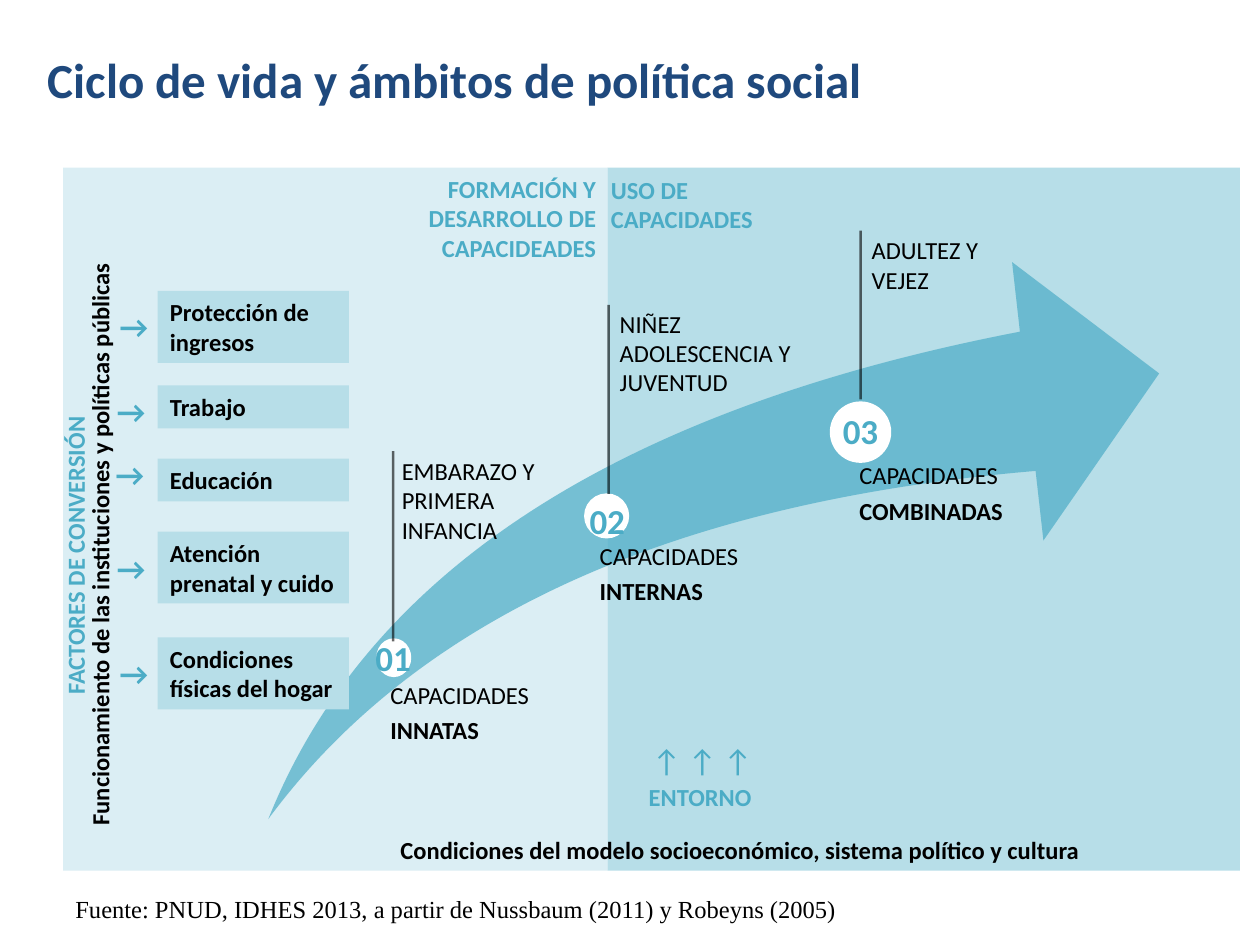
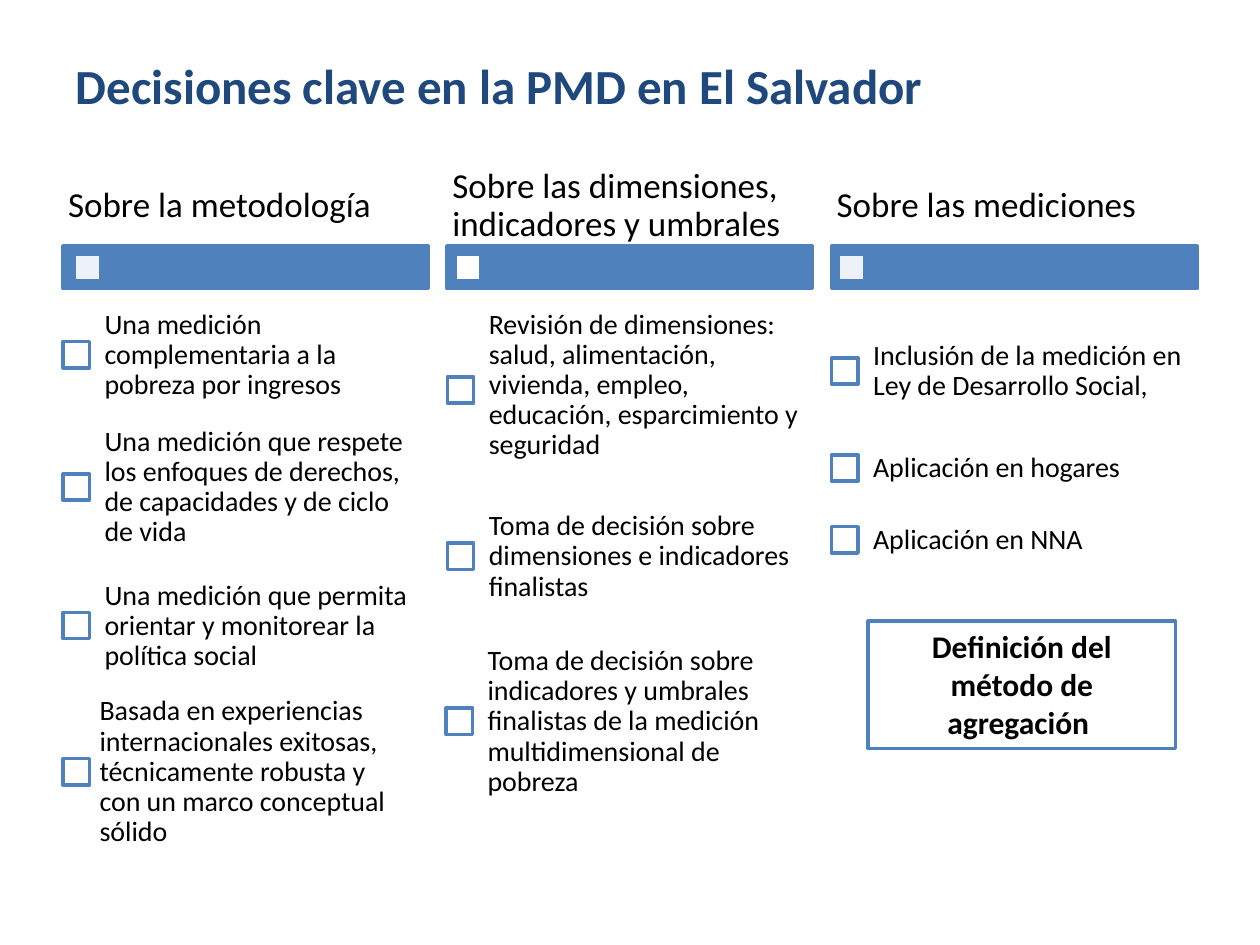
from dataclasses import dataclass
from lxml.etree import SubElement
from pptx import Presentation
from pptx.dml.color import RGBColor
from pptx.enum.shapes import MSO_CONNECTOR, MSO_SHAPE
from pptx.enum.text import MSO_ANCHOR, MSO_AUTO_SIZE, PP_ALIGN
from pptx.oxml.ns import qn
from pptx.util import Pt

PX = 9144  # 100 px to the inch


@dataclass(frozen=True)
class Theme:
    navy: str = "1F497D"
    blue: str = "4F81BD"
    teal: str = "4BACC6"
    sky: str = "B7DEE8"
    pale: str = "DBEEF4"
    white: str = "FFFFFF"
    black: str = "000000"
    font: str = "Calibri"
    source_font: str = "Times New Roman"
    title: int = 28
    heading: int = 20
    arrow: int = 18
    item: int = 16
    label: int = 14


theme = Theme()


def draw(slide, kind, box, fill=None, line=None, alpha=100):
    """Add a preset shape, or a text box when kind is None."""
    place = [value * PX for value in box]
    if kind is None:
        return slide.shapes.add_textbox(*place)
    shape = slide.shapes.add_shape(kind, *place)
    shape.shadow.inherit = False
    shape.fill.solid()
    shape.fill.fore_color.rgb = RGBColor.from_string(fill)
    if alpha < 100:
        color = shape.fill._xPr.find(qn("a:solidFill"))[0]
        SubElement(color, qn("a:alpha"), val=str(alpha * 1000))
    if line:
        shape.line.color.rgb = RGBColor.from_string(line)
        shape.line.width = Pt(2)
    else:
        shape.line.fill.background()
    return shape


def write(shape, text, size=theme.label, color=theme.black, bold=False, font=theme.font,
          align=PP_ALIGN.LEFT, anchor=MSO_ANCHOR.TOP, insets=(10, 5, 10, 5),
          spacing=1.0, after=0, wrap=True):
    """Set the text of a shape and format all its paragraphs."""
    frame = shape.text_frame
    frame.text = text
    frame.word_wrap = wrap
    frame.auto_size = MSO_AUTO_SIZE.NONE
    frame.vertical_anchor = anchor
    (frame.margin_left, frame.margin_top,
     frame.margin_right, frame.margin_bottom) = [value * PX for value in insets]
    for paragraph in frame.paragraphs:
        paragraph.alignment = align
        paragraph.line_spacing = spacing
        paragraph.space_after = Pt(after)
        for run in paragraph.runs:
            run.font.name = font
            run.font.size = Pt(size)
            run.font.bold = bold
            run.font.color.rgb = RGBColor.from_string(color)
    return frame


prs = Presentation()
prs.slide_width, prs.slide_height = 1000 * PX, 750 * PX

# Both slides and their titles
titles = [
    ("Ciclo de vida y ámbitos de política social", (28, 34, 1000, 57)),
    ("Decisiones clave en la PMD en El Salvador", (50, 5, 900, 125)),
]
slides = []
for text, box in titles:
    slide = prs.slides.add_slide(prs.slide_layouts[5])
    title = slide.shapes.title
    title.left, title.top, title.width, title.height = [value * PX for value in box]
    write(title, text, theme.title, theme.navy, True, anchor=MSO_ANCHOR.MIDDLE)
    slides.append(slide)
life_cycle, decisions = slides

# Life cycle: two fields and the rising arrow
draw(life_cycle, MSO_SHAPE.RECTANGLE, (482, 133, 502, 558), theme.sky)
draw(life_cycle, MSO_SHAPE.RECTANGLE, (50, 133, 432, 558), theme.pale)
swoosh = draw(life_cycle, MSO_SHAPE.SWOOSH_ARROW, (213, 208, 707, 442), theme.teal, alpha=70)
swoosh.adjustments[0] = swoosh.adjustments[1] = 0.25

# Life stages: circle, number, stage with its line, capability
stages = [
    ("01", (300, 508, 25, 28), (283, 500, 58, 50), 1.0, MSO_ANCHOR.TOP,
     "EMBARAZO Y PRIMERA INFANCIA", (309, 357, 149, 151), (312, 358, 509),
     "INNATAS", (300, 542, 165, 89), 10),
    ("02", (465, 393, 33, 33), (457, 375, 50, 42), 1.5, MSO_ANCHOR.TOP,
     "NIÑEZ ADOLESCENCIA Y JUVENTUD", (482, 240, 185, 151), (483, 242, 392),
     "INTERNAS", (458, 432, 170, 76), 18),
    ("03", (660, 320, 46, 46), (658, 325, 50, 33), 1.0, MSO_ANCHOR.MIDDLE,
     "ADULTEZ Y VEJEZ", (682, 182, 127, 104), (683, 183, 317),
     "COMBINADAS", (658, 368, 170, 107), 24),
]
for (number, circle, number_box, number_spacing, number_anchor, stage, stage_box,
     (x, top, bottom), capability, capability_box, indent) in stages:
    draw(life_cycle, MSO_SHAPE.OVAL, circle, theme.white, theme.white)
    frame = write(draw(life_cycle, None, capability_box), f"CAPACIDADES\n{capability}",
                  insets=(indent, 0, 0, 0), spacing=0.9, after=5)
    frame.paragraphs[1].runs[0].font.bold = True
    write(draw(life_cycle, None, number_box), number, theme.heading, theme.teal, True,
          align=PP_ALIGN.CENTER, anchor=number_anchor, spacing=number_spacing)
    write(draw(life_cycle, None, stage_box), stage)
    stem = life_cycle.shapes.add_connector(
        MSO_CONNECTOR.STRAIGHT, x * PX, top * PX, x * PX, bottom * PX)
    stem.line.color.rgb = RGBColor.from_string(theme.black)
    stem.line.width = Pt(1.5)
    stem_color = stem.line._ln.find(qn("a:solidFill"))[0]
    SubElement(stem_color, qn("a:alpha"), val="60000")
    SubElement(stem._element.spPr, qn("a:effectLst"))

# Field headings, surroundings and source
write(draw(life_cycle, None, (475, 134, 158, 57)), "USO DE CAPACIDADES",
      color=theme.teal, bold=True)
write(draw(life_cycle, None, (309, 133, 174, 81)), "FORMACIÓN Y DESARROLLO DE CAPACIDEADES",
      color=theme.teal, bold=True, align=PP_ALIGN.RIGHT)
write(draw(life_cycle, None, (505, 616, 141, 34)), "ENTORNO", color=theme.teal, bold=True)
write(draw(life_cycle, None, (508, 583, 100, 40)), "↑ ↑ ↑", theme.arrow, theme.teal, wrap=False)
write(draw(life_cycle, None, (308, 658, 702, 34)),
      "Condiciones del modelo socioeconómico, sistema político y cultura", bold=True)
write(draw(life_cycle, None, (50, 705, 933, 34)),
      "Fuente: PNUD, IDHES 2013, a partir de Nussbaum (2011) y Robeyns (2005)",
      font=theme.source_font)

# Conversion factors: upright captions, then arrows and policy boxes
captions = [
    ("Funcionamiento de las instituciones y políticas públicas", (-182, 415, 523, 34), theme.black),
    ("FACTORES DE CONVERSIÓN", (-187, 424, 494, 34), theme.teal),
]
for text, box, color in captions:
    caption = draw(life_cycle, None, box)
    caption.rotation = 270
    write(caption, text, color=color, bold=True, align=PP_ALIGN.CENTER)

factors = [
    ("Protección de ingresos", 231, 57, 85, 239),
    ("Trabajo", 306, 34, 83, 306),
    ("Educación", 364, 34, 82, 356),
    ("Atención prenatal y cuido", 422, 57, 83, 431),
    ("Condiciones físicas del hogar", 506, 57, 85, 514),
]
for factor, top, height, arrow_left, arrow_top in factors:
    write(draw(life_cycle, None, (arrow_left, arrow_top, 42, 40)), "→",
          theme.arrow, theme.teal, True)
    write(draw(life_cycle, MSO_SHAPE.RECTANGLE, (125, top, 152, height), theme.sky),
          factor, bold=True, anchor=MSO_ANCHOR.MIDDLE)

# Decisions: three columns; each item has its box top and a shift to the left
columns = [
    ("Sobre la metodología", 9, 90, [
        ("Una medición complementaria a la pobreza por ingresos", 271, 0, 0),
        ("Una medición que respete los enfoques de derechos, de capacidades y de ciclo de vida",
         376, 0, 0),
        ("Una medición que permita orientar y monitorear la política social", 486, 0, 0),
        ("Basada en experiencias internacionales exitosas, técnicamente robusta y "
         "con un marco conceptual sólido", 602, 0, 4),
    ]),
    ("Sobre las dimensiones, indicadores y umbrales", 6, 100, [
        ("Revisión de dimensiones: salud, alimentación, vivienda, empleo, educación, "
         "esparcimiento y seguridad", 299, 0, 0),
        ("Toma de decisión sobre dimensiones e indicadores finalistas", 431, 0, 0),
        ("Toma de decisión sobre indicadores y umbrales finalistas de la medición "
         "multidimensional de pobreza", 562, 1, 1),
    ]),
    ("Sobre las mediciones", 5, 90, [
        ("Inclusión de la medición en Ley de Desarrollo Social,", 284, 0, 0),
        ("Aplicación en hogares", 361, 0, 0),
        ("Aplicación en NNA", 418, 0, 0),
    ]),
]
CHECK = 21
for index, (heading, mark_offset, mark_alpha, items) in enumerate(columns):
    left = 50 + 305 * index
    draw(decisions, MSO_SHAPE.RECTANGLE, (left, 195, 290, 34), theme.blue, theme.blue)
    draw(decisions, MSO_SHAPE.RECTANGLE, (left + mark_offset, 202, CHECK, CHECK),
         theme.white, theme.blue, mark_alpha)
    write(draw(decisions, None, (left, 133, 290, 61)), heading, theme.heading,
          anchor=MSO_ANCHOR.MIDDLE, insets=(4, 3, 4, 3), spacing=0.9, after=7)
    for item, top, check_shift, text_shift in items:
        draw(decisions, MSO_SHAPE.RECTANGLE, (left - check_shift, top, CHECK, CHECK),
             theme.white, theme.blue)
        # The text box is centred on its check box; 18 px higher for the five-line first item
        rise = 18 if top == 299 else 14
        write(draw(decisions, None, (left + CHECK - text_shift, top - rise, 270, 50)), item,
              theme.item, anchor=MSO_ANCHOR.MIDDLE, insets=(12, 12, 12, 12),
              spacing=0.9, after=6)

# Aggregation method
write(draw(decisions, MSO_SHAPE.RECTANGLE, (689, 493, 244, 101), theme.white, theme.blue),
      "Definición del método de agregación ", theme.arrow, bold=True, align=PP_ALIGN.CENTER)

prs.save("out.pptx")
